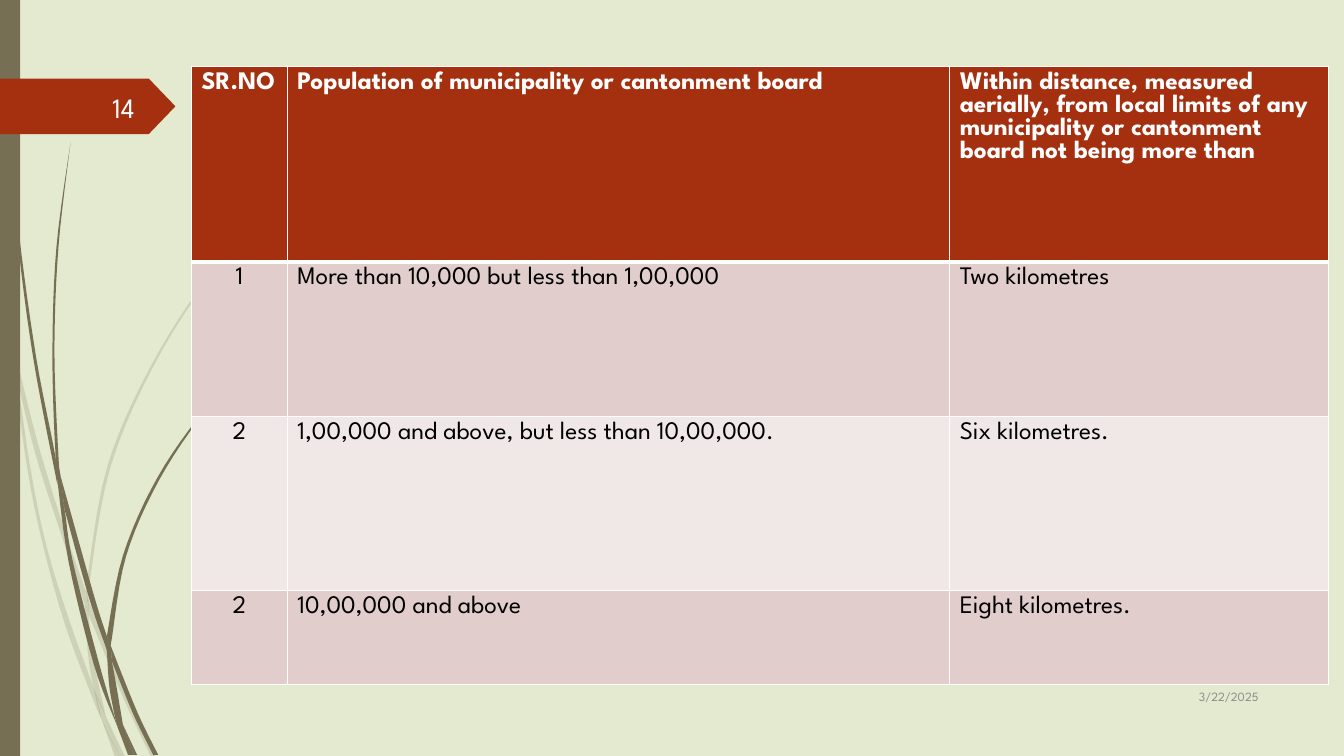
from lxml.etree import SubElement
from pptx import Presentation
from pptx.dml.color import RGBColor
from pptx.enum.shapes import MSO_SHAPE as Preset
from pptx.enum.text import MSO_ANCHOR as Anchor, PP_ALIGN as Align
from pptx.oxml.ns import qn
from pptx.util import Inches, Pt

FONT = "League Spartan"
OLIVE, RUST, WHITE = "766F54", "A53010", "FFFFFF"
WIDTH, HEIGHT = 13.33, 7.5

PALE_BLADES = [
    ([(0, 2.82), (.09, 3.22), (.11, 3.5)], [(0, 2.99), (.1, 3.44), (.11, 3.5)]),
    ([(.14, 3.45), (.36, 4.34), (.62, 5.2), (.85, 5.86)], [(.17, 3.76), (.35, 4.5), (.58, 5.22), (.84, 5.99)]),
    ([(.88, 5.96), (1.27, 6.92), (1.55, 7.51)], [(.88, 6.1), (1.23, 6.94), (1.5, 7.51)]),
    ([(1.05, 7.11), (1.24, 7.51)], [(1.05, 7.11), (1.19, 7.51)]),
    ([(.11, 3.5), (.17, 3.76), (.31, 4.69), (.47, 5.45), (.7, 6.19), (.93, 6.83), (1.01, 7.14)],
     [(.11, 3.5), (.28, 4.7), (.44, 5.46), (.65, 6.21), (.92, 6.93), (1.01, 7.14)]),
    ([(.84, 5.99), (.87, 6.46), (.93, 6.83), (1.05, 7.11)], [(.84, 5.99), (.88, 6.1), (.91, 6.46), (1.05, 7.11)]),
    ([(3.12, 1.53), (2.68, 1.97), (2.28, 2.44), (1.58, 3.48), (1.07, 4.61), (.85, 5.86)],
     [(3.12, 1.54), (2.68, 1.98), (2.29, 2.45), (1.6, 3.49), (1.1, 4.62), (.88, 5.84), (.88, 5.96)]),
    ([(1.01, 7.14), (1.19, 7.51)], [(1.01, 7.14), (1.14, 7.51)]),
    ([(.85, 5.86), (.88, 5.96), (.88, 6.1)], [(.84, 5.99), (.88, 6.08)]),
    ([(.93, 6.83), (1.05, 7.11), (1.19, 7.51)], [(.93, 6.83), (1.01, 7.14), (1.19, 7.51)]),
]
DARK_BLADES = [
    ([(.03, 0), (.07, 1.1), (.17, 2.33), (.33, 3.55), (.57, 4.81)],
     [(.04, 0), (.08, 1.09), (.19, 2.32), (.36, 3.55), (.55, 4.53), (.57, 4.81)]),
    ([(.6, 4.72), (.93, 5.9), (1.06, 6.31)], [(.64, 5.05), (.88, 5.92), (1.06, 6.45)]),
    ([(1.1, 6.41), (1.36, 7.06), (1.57, 7.49)], [(1.11, 6.56), (1.32, 7.08), (1.52, 7.49)]),
    ([(.57, 4.77), (.68, 5.57), (.93, 6.59), (1.17, 7.22)],
     [(.57, 4.77), (.64, 5.05), (.72, 5.56), (.98, 6.57), (1.17, 7.22)]),
    ([(.7, 1.41), (.56, 2.45), (.52, 3.49), (.55, 4.49), (.6, 4.72)],
     [(.7, 1.41), (.58, 2.45), (.54, 3.49), (.58, 4.53), (.6, 4.72)]),
    ([(1.22, 7.19), (1.36, 7.49)], [(1.22, 7.19), (1.33, 7.49)]),
    ([(.55, 4.49), (.6, 4.72), (.64, 5.05)], [(.55, 4.49), (.57, 4.77), (.64, 5.05)]),
    ([(2.6, 3.44), (2.04, 4.05), (1.56, 4.74), (1.22, 5.51), (1.06, 6.31)],
     [(2.61, 3.44), (2.05, 4.06), (1.58, 4.76), (1.25, 5.52), (1.11, 6.33), (1.1, 6.41)]),
    ([(1.17, 7.22), (1.31, 7.49)], [(1.17, 7.22), (1.27, 7.49)]),
    ([(1.06, 6.45), (1.1, 6.91), (1.22, 7.19)], [(1.06, 6.45), (1.11, 6.56), (1.22, 7.19)]),
    ([(1.06, 6.31), (1.1, 6.41), (1.11, 6.56)], [(1.06, 6.31), (1.06, 6.45), (1.11, 6.56)]),
    ([(1.1, 6.91), (1.22, 7.19), (1.33, 7.49)], [(1.1, 6.91), (1.17, 7.22), (1.3, 7.49)]),
]
DISTANCES = [
    ("SR.NO", "Population of municipality or cantonment board",
     "Within distance, measured aerially, from local limits of any municipality "
     "or cantonment board not being more than"),
    ("1", "More than 10,000 but less than 1,00,000", "Two kilometres"),
    ("2", "1,00,000 and above, but less than 10,00,000.", "Six kilometres."),
    ("2", "10,00,000 and above", "Eight kilometres."),
]
COLUMN_WIDTHS = (0.95, 6.57, 3.76)
ROW_HEIGHTS = (1.94, 1.54, 1.73, 0.93)
ROW_FILLS = (RUST, "E1CDCC", "F0E8E7", "E1CDCC")


def paint(fill, colour):
    """Give a fill one solid colour."""
    fill.solid()
    fill.fore_color.rgb = RGBColor.from_string(colour)


def finish(shape, colour):
    """Leave a shape flat, filled and without outline."""
    shape.shadow.inherit = False
    paint(shape.fill, colour)
    shape.line.fill.background()


def write(paragraph, words, size, colour, bold=False, align=Align.LEFT):
    """Add one styled run to a paragraph."""
    paragraph.alignment = align
    run = paragraph.add_run()
    run.text = words
    run.font.name, run.font.size, run.font.bold = FONT, Pt(size), bold
    paint(run.font.fill, colour)


def smooth(points, steps=6):
    """Return points along a curve passing through the given points."""
    padded = [points[0], *points, points[-1]]
    curve = []
    for a, b, c, d in zip(padded, padded[1:], padded[2:], padded[3:]):
        for step in range(steps):
            t = step / steps
            curve.append(tuple(
                q + t / 2 * (r - p + t * (2 * p - 5 * q + 4 * r - s
                                          + t * (3 * q - p - 3 * r + s)))
                for p, q, r, s in zip(a, b, c, d)))
    return curve + [points[-1]]


def draw_blade(slide, box, edges, opacity):
    """Draw a piece of grass between two curved edges."""
    left, top = box[:2]
    near, far = map(smooth, edges)
    outline = [(Inches(left + x), Inches(top + y)) for x, y in near + far[::-1]]
    builder = slide.shapes.build_freeform(*outline[0])
    builder.add_line_segments(outline[1:], close=True)
    blade = builder.convert_to_shape()
    finish(blade, OLIVE)
    if opacity < 100:
        tint = blade._element.spPr.find(f"{qn('a:solidFill')}/{qn('a:srgbClr')}")
        SubElement(tint, qn("a:alpha"), val=str(opacity * 1000))


def add_block(slide, preset, box, colour):
    """Add a plain preset shape in a box."""
    block = slide.shapes.add_shape(preset, *map(Inches, box))
    finish(block, colour)
    return block


def add_label(slide, box, words, size, colour):
    """Add a right-aligned label centred vertically in a box."""
    frame = slide.shapes.add_textbox(*map(Inches, box)).text_frame
    frame.word_wrap, frame.vertical_anchor = True, Anchor.MIDDLE
    write(frame.paragraphs[0], words, size, colour, align=Align.RIGHT)


def add_grass_edge(slide, box):
    """Draw the grass blades and the bar along the left edge."""
    for opacity, blades in ((20, PALE_BLADES), (100, DARK_BLADES)):
        for edges in blades:
            draw_blade(slide, box, edges, opacity)
    left, top, _, height = box
    add_block(slide, Preset.RECTANGLE, (left, top, 0.2, height), OLIVE)


def add_page_tag(slide, box, number):
    """Draw the pointed tag with the slide number."""
    left, top, width, height = box
    tag = add_block(slide, Preset.PENTAGON, box, RUST)
    tag.adjustments[0] = 0.48
    add_label(slide, (left + width / 3, top + 0.08, width * 0.49, height - 0.15),
              number, 20, "FEFFFF")


def add_border(cell, side, points):
    """Draw one white border of a cell."""
    line = SubElement(cell._tc.get_or_add_tcPr(), qn(f"a:ln{side}"), w=str(Pt(points)))
    SubElement(SubElement(line, qn("a:solidFill")), qn("a:srgbClr"), val=WHITE)


def add_distance_table(slide, box):
    """Fill the box with the table of populations and distances."""
    table = slide.shapes.add_table(
        len(DISTANCES), len(COLUMN_WIDTHS), *map(Inches, box)).table
    for column, share in zip(table.columns, COLUMN_WIDTHS):
        column.width = Inches(box[2] * share / sum(COLUMN_WIDTHS))
    for row, share in zip(table.rows, ROW_HEIGHTS):
        row.height = Inches(box[3] * share / sum(ROW_HEIGHTS))
    for r, entries in enumerate(DISTANCES):
        header = r == 0
        for c, words in enumerate(entries):
            cell = table.cell(r, c)
            for side in "LRTB":
                heavy = (r, side) in ((0, "B"), (1, "T"))
                add_border(cell, side, 3 if heavy else 1)
            paint(cell.fill, ROW_FILLS[r])
            centred = c == 0 and not header
            write(cell.text_frame.paragraphs[0], words, 18,
                  WHITE if header else "000000", header,
                  Align.CENTER if centred else Align.LEFT)


def main():
    """Build and save the slide."""
    deck = Presentation()
    deck.slide_width, deck.slide_height = Inches(WIDTH), Inches(HEIGHT)
    slide = deck.slides.add_slide(deck.slide_layouts[6])
    paint(slide.background.fill, "E3EACF")
    add_grass_edge(slide, (0, 0, 3.12, HEIGHT))
    add_page_tag(slide, (0, 0.78, 1.74, 0.55), "14")
    add_distance_table(slide, (1.9, 0.66, 11.28, 6.13))
    add_label(slide, (11.33, 6.7, 1.25, 0.41), "3/22/2025", 9, "8C8C8C")
    deck.save("out.pptx")


if __name__ == "__main__":
    main()
